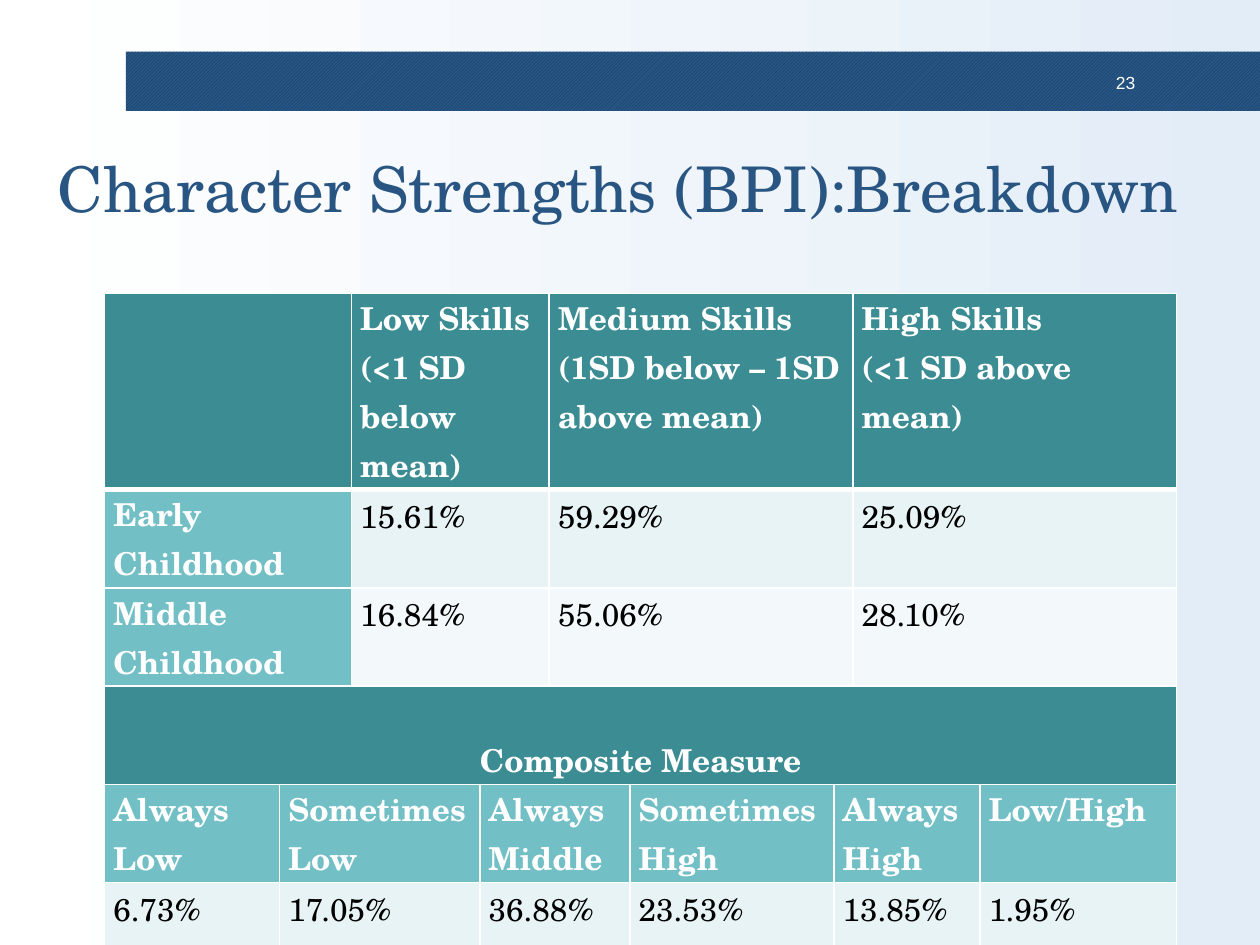
from pptx import Presentation
from pptx.dml.color import RGBColor
from pptx.enum.dml import MSO_PATTERN as Pattern
from pptx.enum.shapes import MSO_SHAPE as Shape
from pptx.enum.text import MSO_ANCHOR as Anchor, PP_ALIGN as Align
from pptx.oxml.ns import qn
from pptx.util import Inches, Pt
from lxml.etree import SubElement

SERIF, SANS = "TeX Gyre Schola", "Arial"
WHITE, BLACK, NAVY = "FFFFFF", "000000", "295582"
TEAL, AQUA, TINT, PALE = "3C8C93", "72BFC5", "E7F3F4", "F3F9FA"

# Shared column grid, in inches; both halves of the table span its columns
COLUMNS = [1.39, 0.57, 1.02, 0.55, 0.64, 1.62, 0.15, 1.01, 1.56]
ROW_HEIGHT = 0.78
SKILL_SPANS = [2, 2, 3, 2]
COMPOSITE_SPANS = [1, 2, 2, 1, 2, 1]

# Each row: column spans, cell texts, fill of first cell, fill of the others
ROWS = [
    (SKILL_SPANS, ["", "Low Skills\n(<1 SD below mean)",
                   "Medium Skills\n(1SD below – 1SD above mean)",
                   "High Skills\n(<1 SD above mean)"], TEAL, TEAL),
    (SKILL_SPANS, ["Early Childhood", "15.61%", "59.29%", "25.09%"], AQUA, TINT),
    (SKILL_SPANS, ["Middle Childhood", "16.84%", "55.06%", "28.10%"], AQUA, PALE),
    ([9], ["Composite Measure"], TEAL, TEAL),
    (COMPOSITE_SPANS, ["Always Low", "Sometimes Low", "Always Middle",
                       "Sometimes High", "Always High", "Low/High"], AQUA, AQUA),
    (COMPOSITE_SPANS, ["6.73%", "17.05%", "36.88%", "23.53%", "13.85%", "1.95%"],
     TINT, TINT),
]


def color(value):
    return RGBColor.from_string(value)


def add_span(para, text, size, font, ink, bold=False):
    span = para.add_run()
    span.text = text
    span.font.size, span.font.name, span.font.bold = Pt(size), font, bold
    span.font.color.rgb = color(ink)


def add_text(page, area, text, size, font, ink, align=Align.LEFT, inset=0.04):
    frame = page.shapes.add_textbox(*map(Inches, area)).text_frame
    frame.word_wrap = True
    frame.vertical_anchor = Anchor.MIDDLE
    frame.margin_left = frame.margin_right = Inches(inset)
    frame.margin_top = frame.margin_bottom = Inches(0.04)
    frame.paragraphs[0].alignment = align
    add_span(frame.paragraphs[0], text, size, font, ink)


def paint_background(page):
    fill = page.background.fill
    fill.gradient()
    fill.gradient_angle = 0
    for stop, place, value in zip(fill.gradient_stops, (0, 1), (WHITE, "E3EDF7")):
        stop.position = place
        stop.color.rgb = color(value)


def add_banner(page, area):
    left, top, width, height = area
    bar = page.shapes.add_shape(Shape.RECTANGLE, *map(Inches, area))
    bar.shadow.inherit = False
    bar.line.fill.background()
    bar.fill.patterned()
    bar.fill.pattern = Pattern.LIGHT_UPWARD_DIAGONAL
    bar.fill.fore_color.rgb = color("083868")
    bar.fill.back_color.rgb = color(NAVY)
    # Page number near the right end of the bar
    number_area = (left + width - 1.33, top + 0.13, 0.41, 0.23)
    add_text(page, number_area, "23", 10, SANS, WHITE, Align.RIGHT, 0.07)


def set_borders(cell, bottom):
    props = cell._tc.get_or_add_tcPr()
    for side, width in (("L", 1), ("R", 1), ("T", 1), ("B", bottom)):
        line = SubElement(props, qn("a:ln" + side), w=str(Pt(width)))
        SubElement(SubElement(line, qn("a:solidFill")), qn("a:srgbClr"), val=WHITE)


def fill_cell(cell, text, back):
    cell.margin_left = cell.margin_right = Inches(0.07)
    cell.margin_top = cell.margin_bottom = 0
    cell.fill.solid()
    cell.fill.fore_color.rgb = color(back)
    header = back in (TEAL, AQUA)
    frame = cell.text_frame
    for index, line in enumerate(text.split("\n") if text else []):
        para = frame.add_paragraph() if index else frame.paragraphs[0]
        para.line_spacing = Pt(28)
        add_span(para, line, 18, SERIF, WHITE if header else BLACK, header)


def add_results(page, left, top):
    size = (sum(COLUMNS), ROW_HEIGHT * len(ROWS))
    table = page.shapes.add_table(len(ROWS), len(COLUMNS),
                                  *map(Inches, (left, top, *size))).table
    for column, width in zip(table.columns, COLUMNS):
        column.width = Inches(width)
    for row, (spans, texts, first_fill, other_fill) in enumerate(ROWS):
        table.rows[row].height = Inches(ROW_HEIGHT)
        for cell in table.rows[row].cells:
            set_borders(cell, bottom=1 if row else 3)
        start = 0
        for count, text in zip(spans, texts):
            cell = table.cell(row, start)
            if count > 1:
                cell.merge(table.cell(row, start + count - 1))
            fill_cell(cell, text, other_fill if start else first_fill)
            if len(spans) == 1:  # section heading sits centred at the bottom
                cell.vertical_anchor = Anchor.BOTTOM
                cell.text_frame.paragraphs[0].alignment = Align.CENTER
            start += count


def main():
    deck = Presentation()
    deck.slide_width, deck.slide_height = Inches(10), Inches(7.5)
    page = deck.slides.add_slide(deck.slide_layouts[6])
    paint_background(page)
    add_banner(page, (1, 0.41, 9, 0.47))
    add_text(page, (0.42, 0.92, 9.58, 1.13),
             "Character Strengths (BPI):Breakdown", 36, SERIF, NAVY)
    add_results(page, 0.83, 2.33)
    deck.save("out.pptx")


if __name__ == "__main__":
    main()
